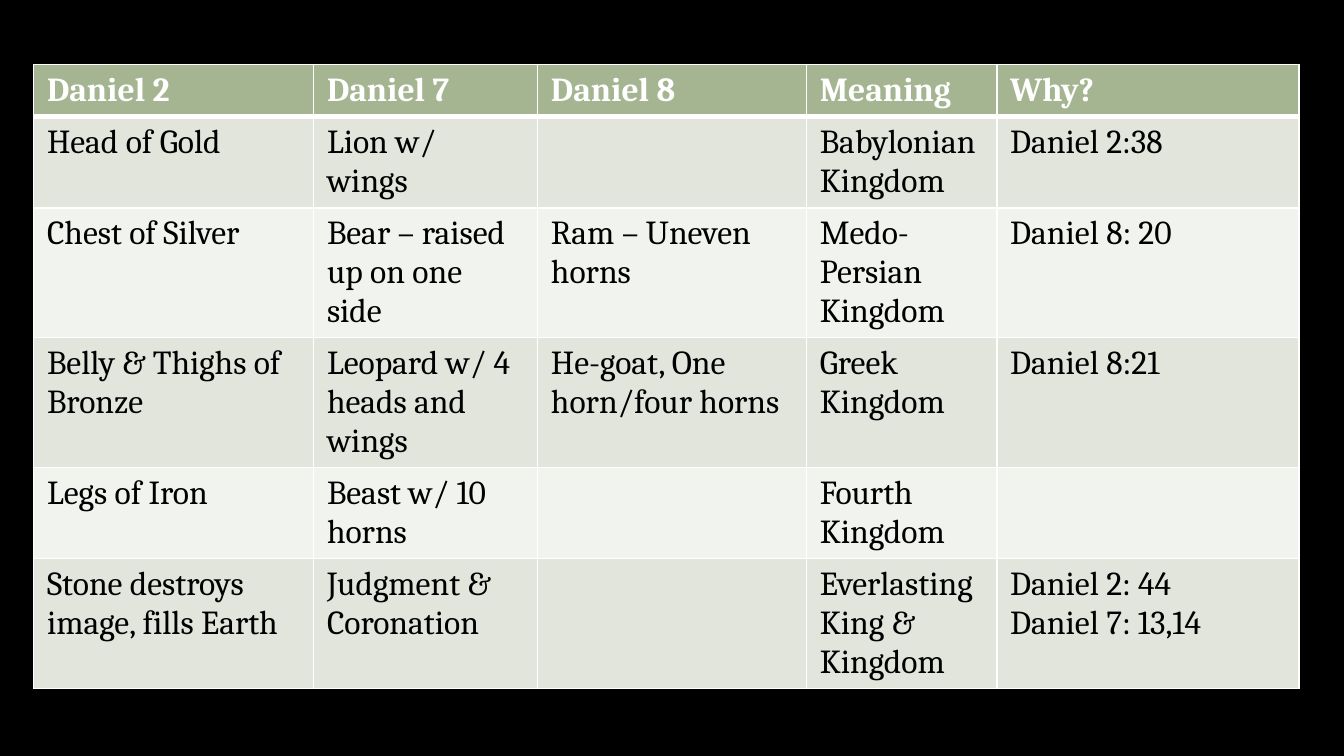
from dataclasses import dataclass

from lxml import etree
from pptx import Presentation
from pptx.dml.color import RGBColor
from pptx.oxml.ns import qn
from pptx.util import Pt

PX = 9525
SIZE = 960, 540
LEFT, TOP = 24, 46
COLS = 200, 160, 192, 136, 216
ROWS = 37, 64, 64, 90, 64, 90
CELLS = [
    ["Daniel 2", "Daniel 7", "Daniel 8", "Meaning", "Why?"],
    ["Head of Gold", "Lion w/ wings", "", "Babylonian Kingdom", "Daniel 2:38"],
    ["Chest of Silver", "Bear – raised up on one side", "Ram – Uneven horns",
     "Medo-Persian Kingdom", "Daniel 8: 20"],
    ["Belly & Thighs of Bronze", "Leopard w/ 4 heads and wings",
     "He-goat, One horn/four horns", "Greek Kingdom", "Daniel 8:21"],
    ["Legs of Iron", "Beast w/ 10 horns", "", "Fourth Kingdom", ""],
    ["Stone destroys image, fills Earth", "Judgment & Coronation", "",
     "Everlasting King & Kingdom", "Daniel 2: 44\nDaniel 7: 13,14"],
]


@dataclass(frozen=True)
class Theme:
    back: str = "000000"
    head: str = "A5B592"
    bands: tuple = ("F0F3EE", "E1E5DC")
    light: str = "FFFFFF"
    dark: str = "000000"
    font: str = "Cambria"
    size: int = 18
    thin: int = 1
    thick: int = 3


THEME = Theme()


def paint(fill, color):
    fill.solid()
    fill.fore_color.rgb = RGBColor.from_string(color)


def edge(cell, side, width):
    props = cell._tc.get_or_add_tcPr()
    line = etree.SubElement(props, qn(f"a:ln{side}"), w=str(Pt(width)))
    fill = etree.SubElement(line, qn("a:solidFill"))
    etree.SubElement(fill, qn("a:srgbClr"), val=THEME.light)


def write(cell, text, color, bold):
    style = {"name": THEME.font, "size": Pt(THEME.size), "bold": bold}
    cell.text_frame.text = text
    for para in cell.text_frame.paragraphs:
        for run in para.runs:
            for key, value in style.items():
                setattr(run.font, key, value)
            run.font.color.rgb = RGBColor.from_string(color)


def dress(cell, row, text):
    head = row == 0
    thick = {"B"} if head else {"T"} if row == 1 else set()
    for side in "LRTB":
        edge(cell, side, THEME.thick if side in thick else THEME.thin)
    paint(cell.fill, THEME.head if head else THEME.bands[row % 2])
    write(cell, text, THEME.light if head else THEME.dark, head)


def grid(slide):
    box = [n * PX for n in (LEFT, TOP, sum(COLS), sum(ROWS))]
    table = slide.shapes.add_table(len(ROWS), len(COLS), *box).table
    table.horz_banding = False
    for col, width in zip(table.columns, COLS):
        col.width = width * PX
    for row, height in zip(table.rows, ROWS):
        row.height = height * PX
    for row, texts in enumerate(CELLS):
        for col, text in enumerate(texts):
            dress(table.cell(row, col), row, text)


def main():
    deck = Presentation()
    deck.slide_width, deck.slide_height = (n * PX for n in SIZE)
    slide = deck.slides.add_slide(deck.slide_layouts[6])
    paint(slide.background.fill, THEME.back)
    grid(slide)
    deck.save("out.pptx")


if __name__ == "__main__":
    main()
